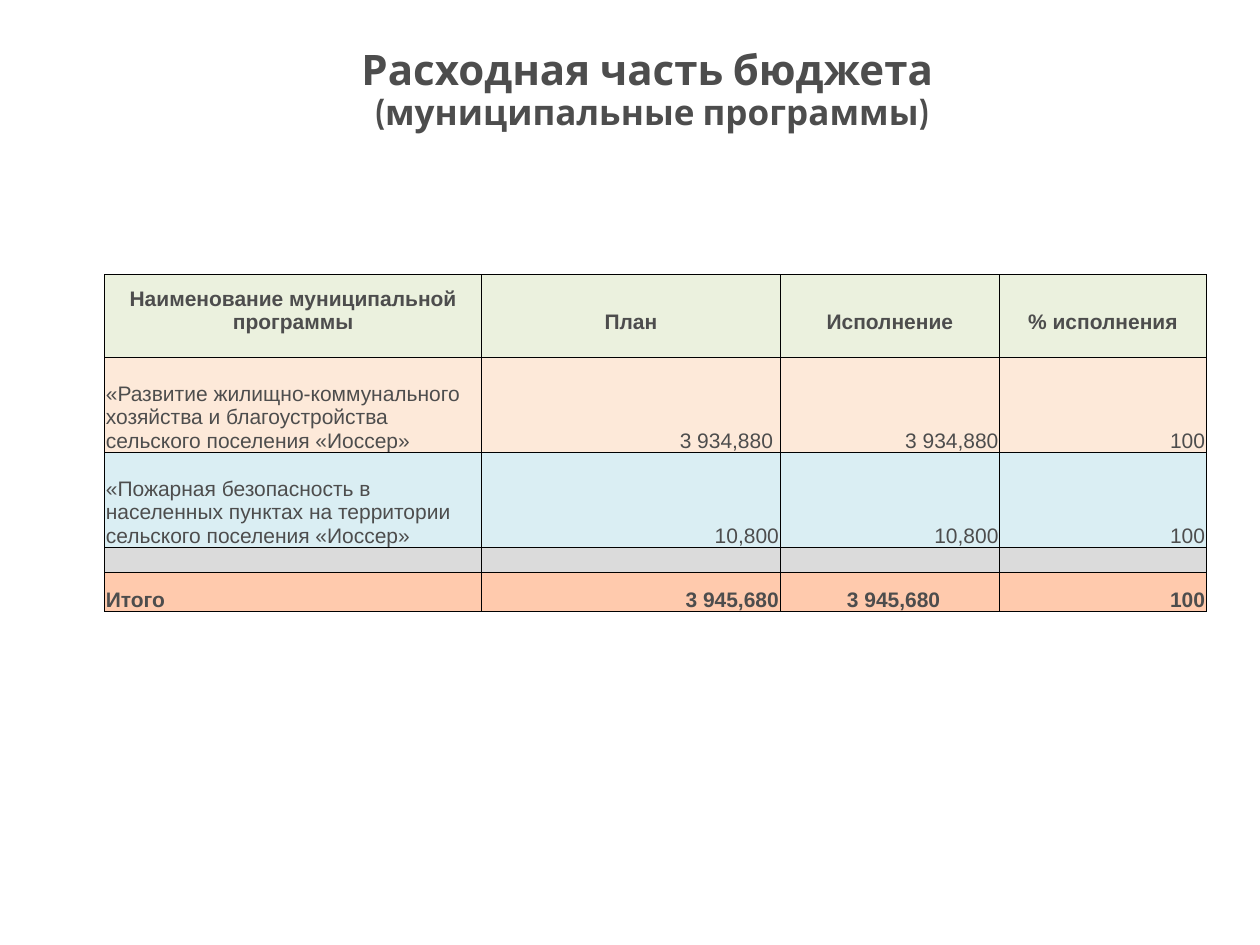
from dataclasses import dataclass

from lxml import etree
from pptx import Presentation
from pptx.dml.color import RGBColor
from pptx.enum.text import MSO_ANCHOR, PP_ALIGN
from pptx.oxml.ns import qn
from pptx.util import Pt

LEFT, CENTER, RIGHT = PP_ALIGN.LEFT, PP_ALIGN.CENTER, PP_ALIGN.RIGHT
MIDDLE, BOTTOM = MSO_ANCHOR.MIDDLE, MSO_ANCHOR.BOTTOM


@dataclass(frozen=True)
class Theme:
    text: str = "4D4D4D"
    border: str = "000000"
    header_fill: str = "EBF1DE"
    housing_fill: str = "FDE9D9"
    safety_fill: str = "DAEEF3"
    gap_fill: str = "DBDBDB"
    total_fill: str = "FFCAAD"
    title_font: str = "Cabin"
    table_font: str = "Arial"
    title_size: float = 24
    subtitle_size: float = 20
    table_size: float = 12
    gap_size: float = 8
    border_width: float = 0.5
    inset: float = 0.7


@dataclass(frozen=True)
class BudgetRow:
    texts: tuple[str, ...]
    height: float
    fill: str
    bold: bool = False
    alignments: tuple = (LEFT, RIGHT, RIGHT, RIGHT)
    right_insets: tuple[float, ...] = (THEME_INSET := Theme.inset,) * 4
    bottom_inset: float = 0


THEME = Theme()
COLUMN_WIDTHS = (215.5, 170.5, 125.5, 118)
INSET = THEME.inset
ROWS = (
    BudgetRow(("Наименование муниципальной программы", "План", "Исполнение", "% исполнения"),
              47.5, THEME.header_fill, bold=True, alignments=(CENTER,) * 4, bottom_inset=13.4),
    BudgetRow(("«Развитие жилищно-коммунального хозяйства и благоустройства "
               "сельского поселения «Иоссер»", "3 934,880", "3 934,880", "100"),
              54.3, THEME.housing_fill, right_insets=(INSET, 4, INSET, INSET)),
    BudgetRow(("«Пожарная безопасность в населенных пунктах на территории "
               "сельского поселения «Иоссер»", "10,800", "10,800", "100"),
              54.3, THEME.safety_fill),
    BudgetRow(("",) * 4, 14.3, THEME.gap_fill),
    BudgetRow(("Итого", "3 945,680", "3 945,680", "100"),
              22.3, THEME.total_fill, bold=True, right_insets=(INSET, INSET, 34, INSET)),
)


def add_run(paragraph, text: str, *, font: str, size: float, bold: bool) -> None:
    run = paragraph.add_run()
    run.text = text
    run.font.name = font
    run.font.size = Pt(size)
    run.font.bold = bold
    run.font.color.rgb = RGBColor.from_string(THEME.text)


def set_borders(cell) -> None:
    """Draw all four sides; the lines must precede the fill in the cell XML."""
    properties = cell._tc.get_or_add_tcPr()
    for index, side in enumerate(("lnL", "lnR", "lnT", "lnB")):
        line = etree.Element(qn(f"a:{side}"), w=str(Pt(THEME.border_width)))
        fill = etree.SubElement(line, qn("a:solidFill"))
        etree.SubElement(fill, qn("a:srgbClr"), val=THEME.border)
        properties.insert(index, line)


def fill_cell(cell, text: str, row: BudgetRow, column: int) -> None:
    cell.margin_left = Pt(INSET)
    cell.margin_right = Pt(row.right_insets[column])
    cell.margin_top = Pt(INSET)
    cell.margin_bottom = Pt(row.bottom_inset)
    cell.vertical_anchor = BOTTOM
    cell.fill.solid()
    cell.fill.fore_color.rgb = RGBColor.from_string(row.fill)
    set_borders(cell)
    paragraph = cell.text_frame.paragraphs[0]
    paragraph.alignment = row.alignments[column]
    if text:
        add_run(paragraph, text, font=THEME.table_font, size=THEME.table_size, bold=row.bold)
    else:
        etree.SubElement(paragraph._p, qn("a:endParaRPr"), sz=str(int(THEME.gap_size * 100)))


def add_budget_table(slide, left: float, top: float) -> None:
    table = slide.shapes.add_table(
        len(ROWS), len(COLUMN_WIDTHS), Pt(left), Pt(top),
        Pt(sum(COLUMN_WIDTHS)), Pt(sum(row.height for row in ROWS))).table
    for column, width in zip(table.columns, COLUMN_WIDTHS):
        column.width = Pt(width)
    for table_row, row in zip(table.rows, ROWS):
        table_row.height = Pt(row.height)
        for column, (cell, text) in enumerate(zip(table_row.cells, row.texts)):
            fill_cell(cell, text, row, column)


def add_title(slide) -> None:
    frame = slide.shapes.add_textbox(Pt(93.6), Pt(32), Pt(558), Pt(40)).text_frame
    frame.word_wrap = True
    frame.vertical_anchor = MIDDLE
    paragraph = frame.paragraphs[0]
    paragraph.alignment = CENTER
    paragraph.line_spacing = 0.9
    add_run(paragraph, "Расходная часть бюджета ",
            font=THEME.title_font, size=THEME.title_size, bold=True)
    paragraph.add_line_break()
    add_run(paragraph, "(муниципальные программы)",
            font=THEME.title_font, size=THEME.subtitle_size, bold=True)


def main() -> None:
    presentation = Presentation()
    presentation.slide_width, presentation.slide_height = Pt(720), Pt(540)
    slide = presentation.slides.add_slide(presentation.slide_layouts[6])
    add_title(slide)
    add_budget_table(slide, left=59.8, top=156.8)
    presentation.save("out.pptx")


if __name__ == "__main__":
    main()
